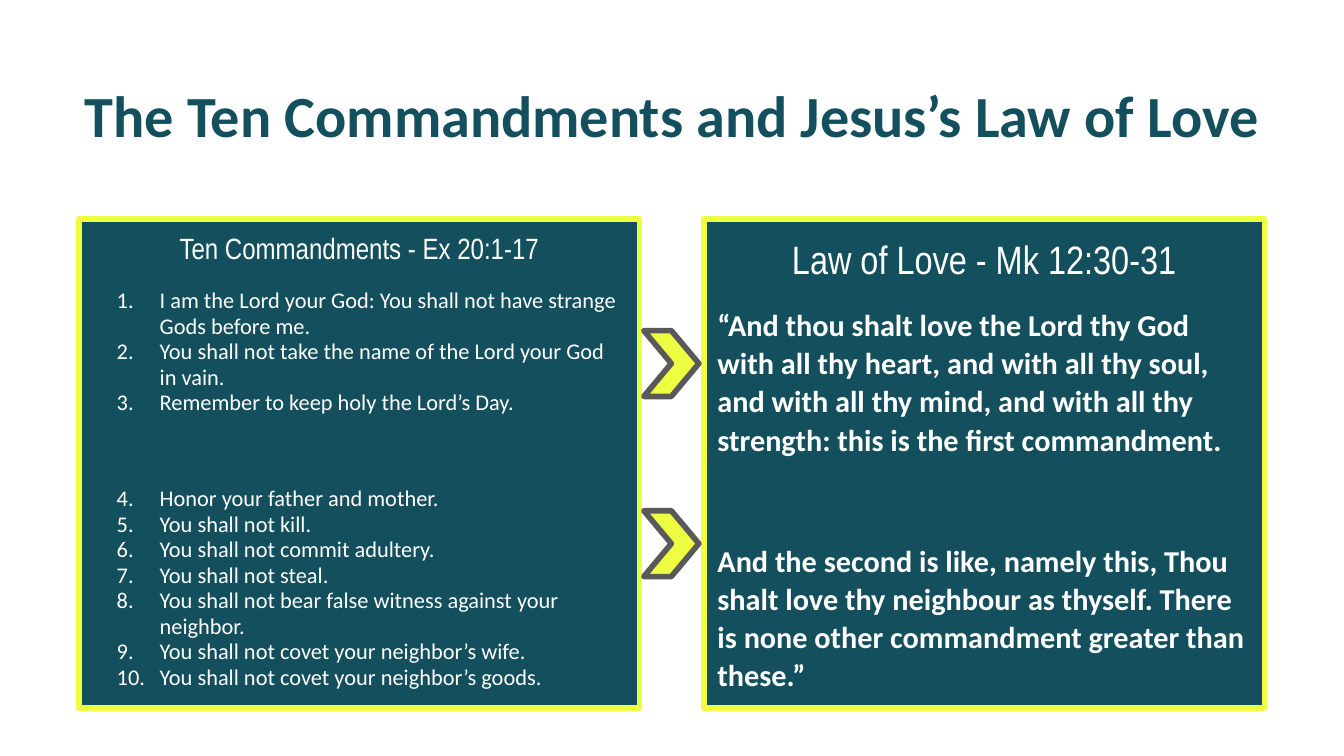
from lxml import etree
from pptx import Presentation
from pptx.dml.color import RGBColor
from pptx.enum.shapes import MSO_SHAPE
from pptx.enum.text import MSO_ANCHOR, PP_ALIGN
from pptx.oxml.ns import qn
from pptx.util import Inches, Pt

RECT, CHEVRON = MSO_SHAPE.RECTANGLE, MSO_SHAPE.CHEVRON
TOP, LEFT, CENTER = MSO_ANCHOR.TOP, PP_ALIGN.LEFT, PP_ALIGN.CENTER
COLORS = {"teal": "134F5C", "lime": "EEFF41", "gray": "595959", "white": "FFFFFF"}

LAWS = [
    "I am the Lord your God: You shall not have strange Gods before me.",
    "You shall not take the name of the Lord your God in vain.",
    "Remember to keep holy the Lord’s Day.",
    "Honor your father and mother.",
    "You shall not kill.",
    "You shall not commit adultery.",
    "You shall not steal.",
    "You shall not bear false witness against your neighbor.",
    "You shall not covet your neighbor’s wife.",
    "You shall not covet your neighbor’s goods.",
]
LOVE = [
    "“And thou shalt love the Lord thy God with all thy heart, and with all thy soul, "
    "and with all thy mind, and with all thy strength: this is the first commandment.",
    "And the second is like, namely this, Thou shalt love thy neighbour as thyself. "
    "There is none other commandment greater than these.”",
]

prs = Presentation()
prs.slide_width, prs.slide_height = Inches(10), Inches(10 * 9 / 16)
slide = prs.slides.add_slide(prs.slide_layouts[6])


def add_box(kind, x, y, w, h, edge, fill):
    box = slide.shapes.add_shape(kind, Inches(x), Inches(y), Inches(w), Inches(h))
    box.shadow.inherit = False
    box.fill.solid()
    box.fill.fore_color.rgb = RGBColor.from_string(COLORS[fill])
    box.line.color.rgb = RGBColor.from_string(COLORS[edge])
    box.line.width = Pt(3)
    etree.SubElement(box.line._get_or_add_ln(), qn("a:round"))
    return box


def add_text(frame, text, size, face, color, bold=False, align=LEFT, gap=0, lead=1.0):
    para = frame.paragraphs[0]
    if para.text:
        para = frame.add_paragraph()
        para.space_before = Pt(gap)
    para.text = text
    para.alignment = align
    para.line_spacing = lead
    font = para.font
    font.name, font.size, font.bold = face, Pt(size), bold
    font.color.rgb = RGBColor.from_string(COLORS[color])
    return para


title = slide.shapes.add_textbox(Inches(0.34), Inches(0.49), Inches(9.32), Inches(0.63))
frames = [title.text_frame]
for x in (0.59, 5.24):
    frames.append(add_box(RECT, x, 1.63, 4.17, 3.64, "lime", "teal").text_frame)
for frame in frames:
    frame.word_wrap = True
    frame.vertical_anchor = TOP
    frame.margin_left = frame.margin_right = Inches(0.1)
    frame.margin_top = frame.margin_bottom = Inches(0.1)
head, left, right = frames

add_text(head, "The Ten Commandments and Jesus’s Law of Love", 31.2, "Calibri", "teal", True, CENTER)

add_text(left, "Ten Commandments - Ex 20:1-17", 15.7, "Arial Narrow", "white", align=CENTER, lead=0.95)
gaps = {0: 12, 3: 37.5}
for i, law in enumerate(LAWS):
    para = add_text(left, law, 12, "Calibri", "white", gap=gaps.get(i, 0), lead=0.95)
    props = para._p.get_or_add_pPr()
    props.set("marL", str(Inches(0.5)))
    props.set("indent", str(Inches(-0.32)))
    mark = etree.Element(qn("a:buAutoNum"), type="arabicPeriod")
    props.find(qn("a:defRPr")).addprevious(mark)

add_text(right, "Law of Love - Mk 12:30-31", 21.2, "Arial Narrow", "white", align=CENTER, lead=1.05)
for verse, gap in zip(LOVE, (12, 44.5)):
    add_text(right, verse, 16.2, "Calibri", "white", True, gap=gap, lead=1.05)

for y in (2.46, 3.8):
    add_box(CHEVRON, 4.79, y, 0.41, 0.49, "gray", "lime")

prs.save("out.pptx")
